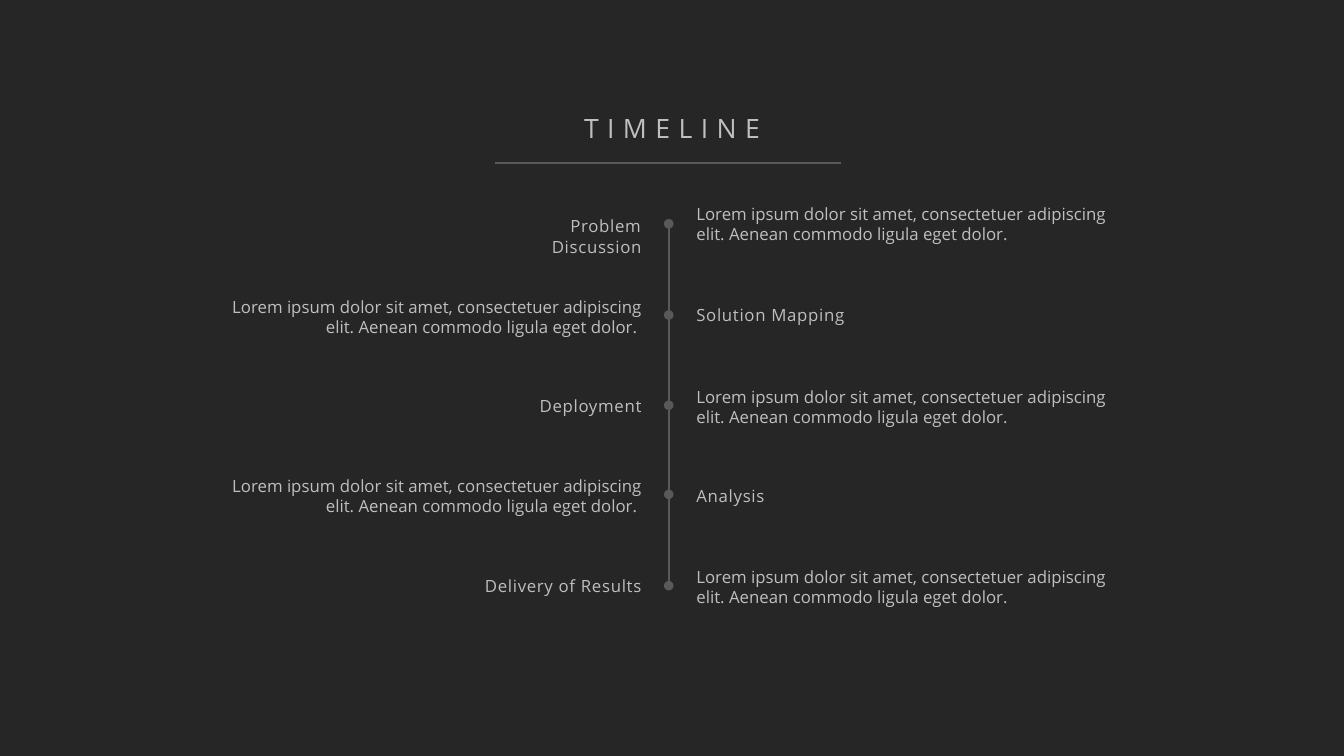
from lxml.etree import SubElement
from pptx import Presentation
from pptx.dml.color import RGBColor as Color
from pptx.enum.shapes import MSO_CONNECTOR as Connector, MSO_SHAPE as Shape
from pptx.enum.text import MSO_ANCHOR as Anchor, MSO_AUTO_SIZE as AutoSize, PP_ALIGN as Align
from pptx.oxml.ns import qn
from pptx.util import Pt

PX = 9144
COLORS = {"background": "262626", "text": "BFBFBF", "line": "595959"}
LEFT_EDGE, RIGHT_EDGE, AXIS = 1283, 1372, 1327
DOT = 19
DESCRIPTION = ("Lorem ipsum dolor sit amet, consectetuer adipiscing elit. "
               "Aenean commodo ligula eget dolor.")
MILESTONES = [
    ("Problem Discussion", 444, 424, 283, 91, 399),
    ("Solution Mapping", 625, 599, 317, 50, 584),
    ("Deployment", 804, 781, 295, 50, 763),
    ("Analysis", 981, 958, 346, 50, 938),
    ("Delivery of Results", 1162, 1137, 384, 50, 1120),
]


def write(shape, text, size, align, spacing=0, wrap=True):
    frame = shape.text_frame
    frame.text = text
    frame_format = {"word_wrap": wrap, "auto_size": AutoSize.SHAPE_TO_FIT_TEXT,
                    "vertical_anchor": Anchor.TOP}
    for name, value in frame_format.items():
        setattr(frame, name, value)
    paragraph = frame.paragraphs[0]
    paragraph.alignment = align
    font = paragraph.runs[0].font
    for name, value in {"name": "Open Sans", "size": Pt(size)}.items():
        setattr(font, name, value)
    font.color.rgb = Color.from_string(COLORS["text"])
    if spacing:
        for properties in shape.element.iter(qn("a:rPr")):
            properties.set("spc", str(spacing * 100))


def draw_line(slide, *ends):
    line = slide.shapes.add_connector(Connector.STRAIGHT, *[end * PX for end in ends])
    line.line.width = Pt(3)
    line.line.color.rgb = Color.from_string(COLORS["line"])
    SubElement(line.element.spPr, qn("a:effectLst"))


presentation = Presentation()
presentation.slide_width = 2667 * PX
presentation.slide_height = 1500 * PX
slide = presentation.slides.add_slide(presentation.slide_layouts[5])
slide.background.fill.solid()
slide.background.fill.fore_color.rgb = Color.from_string(COLORS["background"])

title = slide.shapes.title
title_box = {"left": 1139, "top": 218, "width": 389, "height": 74}
for name, value in title_box.items():
    setattr(title, name, value * PX)
write(title, "TIMELINE", 38, Align.CENTER, spacing=12, wrap=False)
draw_line(slide, 983, 324, 1669, 324)

draw_line(slide, AXIS, MILESTONES[0][1], AXIS, MILESTONES[-1][1])

for index, (heading, center, heading_top, width, height, description_top) in enumerate(MILESTONES):
    dot_box = (AXIS - DOT / 2, center - DOT / 2, DOT, DOT)
    dot = slide.shapes.add_shape(Shape.OVAL, *[int(value * PX) for value in dot_box])
    dot.shadow.inherit = False
    dot.fill.solid()
    dot.fill.fore_color.rgb = Color.from_string(COLORS["line"])
    dot.line.fill.background()

    if index % 2 == 0:
        heading_left, heading_align = LEFT_EDGE - width, Align.RIGHT
        description_left, description_width = RIGHT_EDGE, 882
        description, description_align = DESCRIPTION, Align.LEFT
    else:
        heading_left, heading_align = RIGHT_EDGE, Align.LEFT
        description_left, description_width = LEFT_EDGE - 843, 843
        description, description_align = DESCRIPTION + " ", Align.RIGHT

    heading_box = (heading_left, heading_top, width, height)
    description_box = (description_left, description_top, description_width, 91)
    for box, text, align, spacing in (
        (heading_box, heading, heading_align, 1),
        (description_box, description, description_align, 0),
    ):
        text_box = slide.shapes.add_textbox(*[value * PX for value in box])
        write(text_box, text, 24, align, spacing)

presentation.save("out.pptx")
